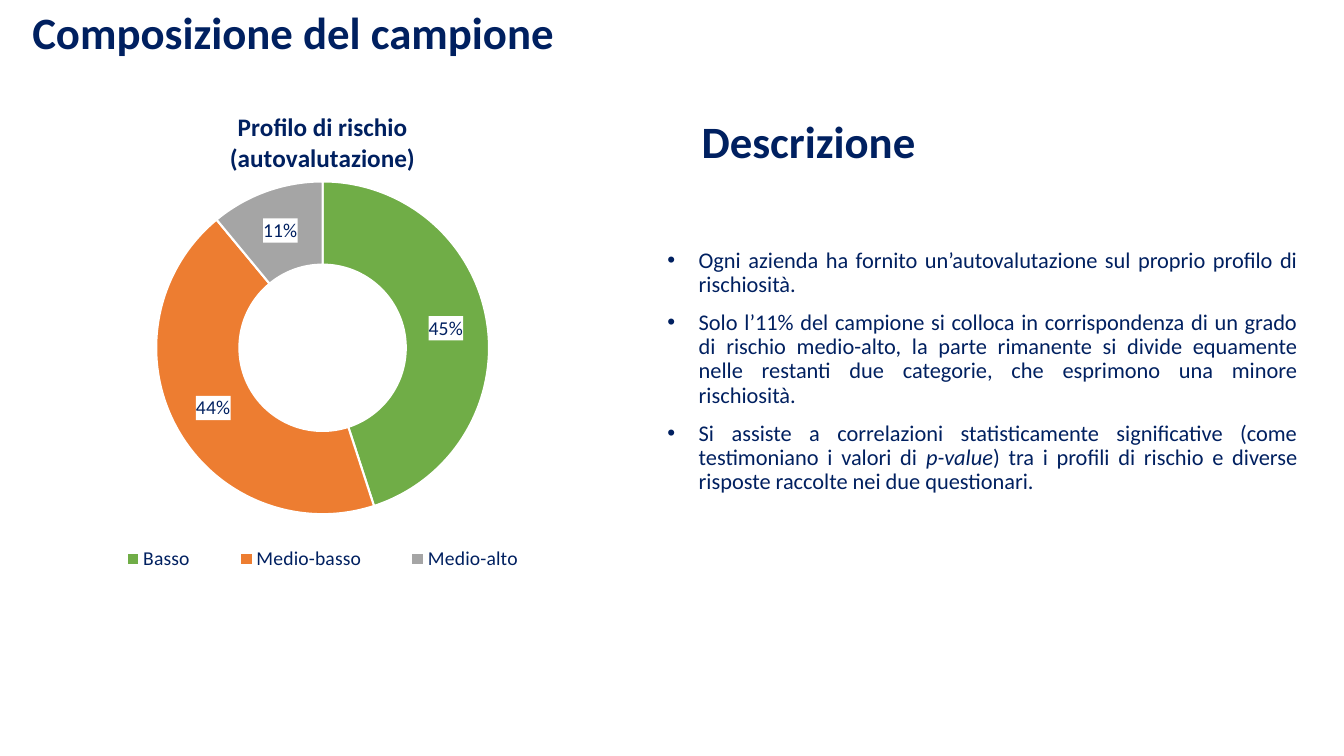
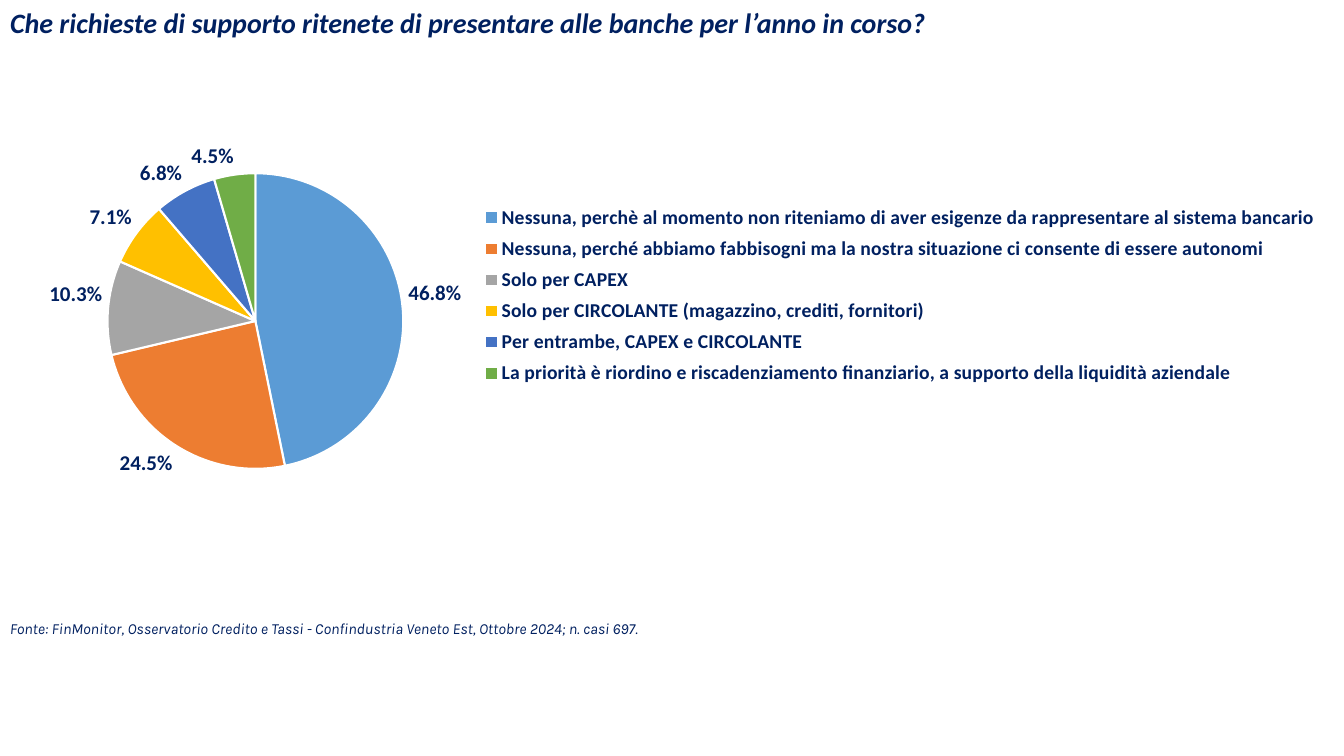
from lxml import etree
from pptx import Presentation
from pptx.chart.data import CategoryChartData
from pptx.dml.color import RGBColor
from pptx.enum.chart import XL_CHART_TYPE, XL_LABEL_POSITION, XL_LEGEND_POSITION
from pptx.enum.text import MSO_ANCHOR, MSO_AUTO_SIZE, PP_ALIGN
from pptx.oxml import parse_xml
from pptx.oxml.ns import nsdecls, qn
from pptx.util import Inches, Pt

RING, PIE = XL_CHART_TYPE.DOUGHNUT, XL_CHART_TYPE.PIE
OUTER = XL_LABEL_POSITION.OUTSIDE_END
BOTTOM = XL_LEGEND_POSITION.BOTTOM
TOP, MIDDLE = MSO_ANCHOR.TOP, MSO_ANCHOR.MIDDLE
LEFT, JUST = PP_ALIGN.LEFT, PP_ALIGN.JUSTIFY

WIDE, HIGH = 13.33, 7.5
FONT = "Calibri"
COLOR = {"navy": "002060", "white": "FFFFFF", "sky": "5B9BD5", "orange": "ED7D31",
         "gray": "A5A5A5", "gold": "FFC000", "blue": "4472C4", "green": "70AD47"}


def rgb(name):
    return RGBColor.from_string(COLOR[name])


def style(font, size, face=FONT, bold=False, italic=False):
    font.name, font.size = face, Pt(size)
    font.bold, font.italic = bold, italic
    font.color.rgb = rgb("navy")


def bullet(para, indent):
    props = para._p.get_or_add_pPr()
    props.set("marL", str(Inches(indent)))
    props.set("indent", str(-Inches(indent)))
    etree.SubElement(props, qn("a:buChar")).set("char", "•")


def write(shape, box, paras, size, anchor=TOP, align=LEFT, spacing=None,
          before=0, indent=0, italic=False, **look):
    """Fill a shape; a paragraph is a string or a list of (text, italic) runs."""
    shape.left, shape.top, shape.width, shape.height = map(Inches, box)
    frame = shape.text_frame
    frame.word_wrap, frame.auto_size = True, MSO_AUTO_SIZE.NONE
    frame.vertical_anchor = anchor
    for i, runs in enumerate(paras):
        para = frame.add_paragraph() if i else frame.paragraphs[0]
        para.alignment, para.line_spacing = align, spacing
        para.space_before = Pt(before if i else 0)
        if indent:
            bullet(para, indent)
        for text, slant in [(runs, italic)] if isinstance(runs, str) else runs:
            run = para.add_run()
            run.text = text
            style(run.font, size, italic=slant, **look)


def textbox(slide, box, paras, size, **look):
    write(slide.shapes.add_textbox(0, 0, 0, 0), box, paras, size, **look)


def place(part, index, shares, inner=False):
    """Give a chart part a manual layout in shares of the chart."""
    for old in part.findall(qn("c:layout")):
        part.remove(old)
    layout = parse_xml(f"<c:layout {nsdecls('c')}><c:manualLayout/></c:layout>")
    rules = [("layoutTarget", "inner")] if inner else []
    rules += [("xMode", "edge"), ("yMode", "edge"), *zip("xywh", shares)]
    for tag, value in rules:
        etree.SubElement(layout[0], qn("c:" + tag)).set("val", str(value))
    part.insert(index, layout)


def round_chart(slide, kind, box, slices, colors, plot, legend, form, size,
                bold=False, spot=None):
    data = CategoryChartData(number_format=form)
    data.categories = [name for name, _ in slices]
    data.add_series("Series 1", [value for _, value in slices])
    chart = slide.shapes.add_chart(kind, *map(Inches, box), data).chart
    chart.has_title = False
    style(chart.font, 10)

    pie = chart.plots[0]
    pie.vary_by_categories = True
    for i, color in enumerate(colors):
        look = pie.series[0].points[i].format
        look.fill.solid()
        look.fill.fore_color.rgb = rgb(color)
        look.line.color.rgb = rgb("white")
        look.line.width = Pt(1.5)

    pie.has_data_labels = True
    labels = pie.data_labels
    labels.show_value, labels.show_percentage = True, False
    labels.number_format, labels.number_format_is_linked = form, False
    style(labels.font, size, bold=bold)
    if spot is not None:
        labels.position = spot

    chart.has_legend = True
    chart.legend.position = BOTTOM
    chart.legend.include_in_layout = False
    style(chart.legend.font, 14, bold=bold)
    place(chart.legend._element, 1, legend)
    place(chart._chartSpace.chart.plotArea, 0, plot, inner=True)
    return chart


def fill_labels(chart, color):
    text = chart.plots[0].data_labels._element.find(qn("c:txPr"))
    text.addprevious(parse_xml(
        f"<c:spPr {nsdecls('c', 'a')}><a:solidFill>"
        f"<a:srgbClr val='{COLOR[color]}'/></a:solidFill></c:spPr>"))


def name_chart(chart, lines, spot):
    chart.has_title = True
    frame = chart.chart_title.text_frame
    for i, line in enumerate(lines):
        para = frame.add_paragraph() if i else frame.paragraphs[0]
        run = para.add_run()
        run.text = line
        style(run.font, 18, bold=True)
    chart.chart_title.include_in_layout = False
    place(chart.chart_title._element, 1, spot)


def sample(deck):
    slide = deck.slides.add_slide(deck.slide_layouts[1])
    title, body = slide.placeholders
    head = dict(size=32, bold=True, anchor=MIDDLE, spacing=0.9)
    write(title, (0.22, 0, 11.89, 0.7), ["Composizione del campione"], **head)
    textbox(slide, (6.86, 0.7, 5.77, 1.45), ["Descrizione"], **head)
    write(body, (6.52, 2.42, 6.45, 2.37), [
        "Ogni azienda ha fornito un’autovalutazione sul proprio profilo di rischiosità.",
        "Solo l’11% del campione si colloca in corrispondenza di un grado di rischio "
        "medio-alto, la parte rimanente si divide equamente nelle restanti due "
        "categorie, che esprimono una minore rischiosità.",
        [("Si assiste a correlazioni statisticamente significative (come testimoniano "
          "i valori di ", False), ("p-value", True),
         (") tra i profili di rischio e diverse risposte raccolte nei due "
          "questionari.", False)],
    ], 16, align=JUST, spacing=0.9, before=10, indent=0.31)
    chart = round_chart(
        slide, RING, (0.23, 0.7, 5.94, 5.24),
        [("Basso", 0.45), ("Medio-basso", 0.44), ("Medio-alto", 0.11)],
        ["green", "orange", "gray"], plot=(0.22, 0.21, 0.56, 0.63),
        legend=(0.1, 0.89, 0.8, 0.07), form="0%", size=14)
    fill_labels(chart, "white")
    name_chart(chart, ["Profilo di rischio", "(autovalutazione)"], (0.34, 0.07))


def support(deck):
    slide = deck.slides.add_slide(deck.slide_layouts[5])
    write(slide.shapes.title, (0, 0, WIDE, 0.45),
          ["Che richieste di supporto ritenete di presentare alle banche "
           "per l’anno in corso?"], 20, bold=True, italic=True)
    round_chart(
        slide, PIE, (0, 0.45, WIDE, 5.64),
        [("Nessuna, perchè al momento non riteniamo di aver esigenze "
          "da rappresentare al sistema bancario", 0.468),
         ("Nessuna, perché abbiamo fabbisogni ma la nostra situazione "
          "ci consente di essere autonomi", 0.245),
         ("Solo per CAPEX", 0.103),
         ("Solo per CIRCOLANTE (magazzino, crediti, fornitori)", 0.071),
         ("Per entrambe, CAPEX e CIRCOLANTE", 0.068),
         ("La priorità è riordino e riscadenziamento finanziario, "
          "a supporto della liquidità aziendale", 0.045)],
        ["sky", "orange", "gray", "gold", "blue", "green"],
        plot=(0.08, 0.22, 0.22, 0.53), legend=(0.35, 0.27, 0.64, 0.34),
        form="0.0%", size=15, bold=True, spot=OUTER)
    textbox(slide, (0, 6.09, 6.97, 0.29),
            ["Fonte: FinMonitor, Osservatorio Credito e Tassi - Confindustria "
             "Veneto Est, Ottobre 2024; n. casi 697."], 11, face="Karla", italic=True)


def main():
    deck = Presentation()
    deck.slide_width, deck.slide_height = Inches(WIDE), Inches(HIGH)
    sample(deck)
    support(deck)
    deck.save("out.pptx")


if __name__ == "__main__":
    main()
